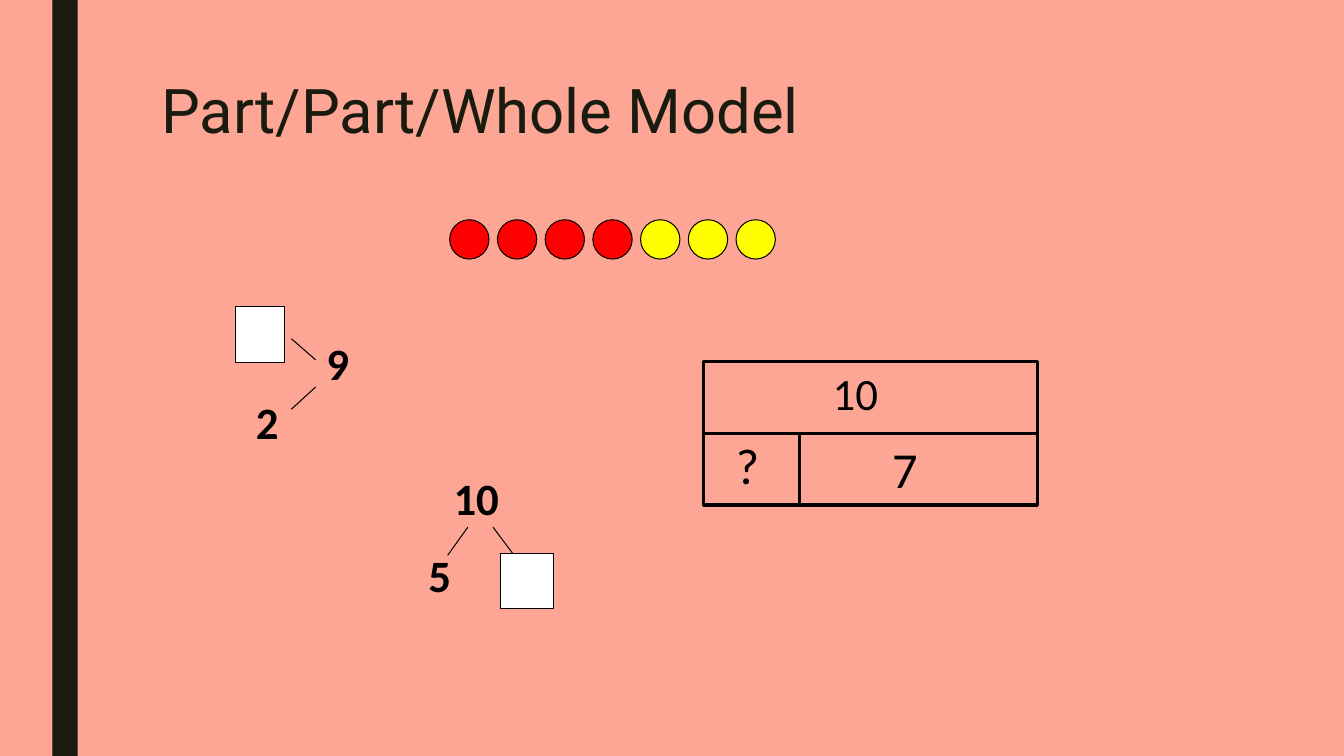
from pptx import Presentation
from pptx.dml.color import RGBColor
from pptx.enum.shapes import MSO_CONNECTOR, MSO_SHAPE
from pptx.enum.text import MSO_ANCHOR, MSO_AUTO_SIZE, PP_ALIGN
from pptx.oxml.ns import qn
from pptx.util import Inches, Pt

RECTANGLE, OVAL = MSO_SHAPE.RECTANGLE, MSO_SHAPE.OVAL
STRAIGHT = MSO_CONNECTOR.STRAIGHT
TOP = MSO_ANCHOR.TOP
NO_FIT = MSO_AUTO_SIZE.NONE
LEFT, JUSTIFY = PP_ALIGN.LEFT, PP_ALIGN.JUSTIFY

COLORS = {
    "background": "FDA695",
    "bar": "191B0E",
    "ink": "000000",
    "red": "FF0000",
    "yellow": "FFFF00",
    "blank": "FFFFFF",
}
TITLE_FONT = {"name": "Roboto", "size": Pt(44), "bold": False}
BOND_FONT = {"name": "Calibri", "size": Pt(32), "bold": True}
WHOLE_FONT = {"name": "Calibri", "size": Pt(32), "bold": False}
PART_FONT = {"name": "Calibri", "size": Pt(36), "bold": False}


def color(name):
    return RGBColor.from_string(COLORS[name])


def write(frame, text, font, ink="ink", align=LEFT):
    for name, value in {"word_wrap": True, "auto_size": NO_FIT, "vertical_anchor": TOP}.items():
        setattr(frame, name, value)
    para = frame.paragraphs[0]
    para.alignment = align
    span = para.add_run()
    span.text = text
    for name, value in font.items():
        setattr(span.font, name, value)
    span.font.color.rgb = color(ink)
    return para


def add_text(page, box, text, font, align=LEFT):
    textbox = page.shapes.add_textbox(*map(Inches, box))
    write(textbox.text_frame, text, font, align=align)


def add_outline(page, kind, box, fill=None, weight=0.75):
    shape = page.shapes.add_shape(kind, *map(Inches, box))
    shape.shadow.inherit = False
    if fill:
        shape.fill.solid()
        shape.fill.fore_color.rgb = color(fill)
    else:
        shape.fill.background()
    if weight:
        shape.line.color.rgb = color("ink")
        shape.line.width = Pt(weight)
    else:
        shape.line.fill.background()


def add_branch(page, start, end):
    branch = page.shapes.add_connector(STRAIGHT, *map(Inches, start + end))
    branch.line.color.rgb = color("ink")
    branch.line.width = Pt(0.75)
    properties = branch._element.spPr
    properties.append(properties.makeelement(qn("a:effectLst"), {}))


def add_title(page, box, text):
    title = page.shapes.title
    title.left, title.top, title.width, title.height = map(Inches, box)
    write(title.text_frame, text, TITLE_FONT, ink="bar").line_spacing = 0.89


def add_counters(page, box, fills):
    left, top, width, size = box
    step = (width - size) / (len(fills) - 1)
    for index, fill in enumerate(fills):
        add_outline(page, OVAL, (left + index * step, top, size, size), fill)


def add_number_bond(page, box, numbers, branches, blank):
    left, top, width, height = box
    for text, across, down in numbers:
        add_text(page, (left + across, top + down, 0.9, 0.73), text, BOND_FONT, JUSTIFY)
    for x1, y1, x2, y2 in branches:
        add_branch(page, (left + x1, top + y1), (left + x2, top + y2))
    across, down, blank_width, blank_height = blank
    add_outline(page, RECTANGLE, (left + across, top + down, blank_width, blank_height), "blank")


def add_bar_model(page, box, whole, parts, split):
    left, top, width, height = box
    row = height / 2
    cells = [
        (0, 0, width),
        (0, row, split),
        (split, row, width - split),
    ]
    for across, down, cell_width in cells:
        add_outline(page, RECTANGLE, (left + across, top + down, cell_width, row), weight=2.25)
    labels = [
        (whole, 1.18, -0.01, WHOLE_FONT),
        (parts[0], 0.22, 0.67, PART_FONT),
        (parts[1], 1.77, row, PART_FONT),
    ]
    for text, across, down, font in labels:
        add_text(page, (left + across, top + down, 0.9, row), text, font)


def build_slide(deck):
    page = deck.slides.add_slide(deck.slide_layouts[5])
    page.background.fill.solid()
    page.background.fill.fore_color.rgb = color("background")
    add_outline(page, RECTANGLE, (0.52, 0, 0.25, 7.5), "bar", weight=0)
    add_title(page, (1.5, 0.75, 10.5, 1.62), "Part/Part/Whole Model")
    add_counters(page, (4.46, 2.18, 3.23, 0.39), ["red"] * 4 + ["yellow"] * 3)
    add_number_bond(
        page, (2.34, 3.04, 1.65, 1.57),
        numbers=[("9", 0.8, 0.24), ("2", 0.1, 0.83)],
        branches=[(0.79, 0.53, 0.55, 0.32), (0.79, 0.8, 0.55, 1.02)],
        blank=(0, 0, 0.48, 0.56),
    )
    add_number_bond(
        page, (4.15, 4.62, 1.34, 1.49),
        numbers=[("10", 0.25, 0), ("5", 0, 0.76)],
        branches=[(0.49, 0.61, 0.29, 0.89), (0.74, 0.61, 0.95, 0.89)],
        blank=(0.81, 0.87, 0.53, 0.55),
    )
    add_bar_model(page, (6.98, 3.59, 3.31, 1.42), "10", ("?", "7"), split=0.95)


def main():
    deck = Presentation()
    deck.slide_width, deck.slide_height = Inches(13.33), Inches(7.5)
    build_slide(deck)
    deck.save("out.pptx")


if __name__ == "__main__":
    main()
